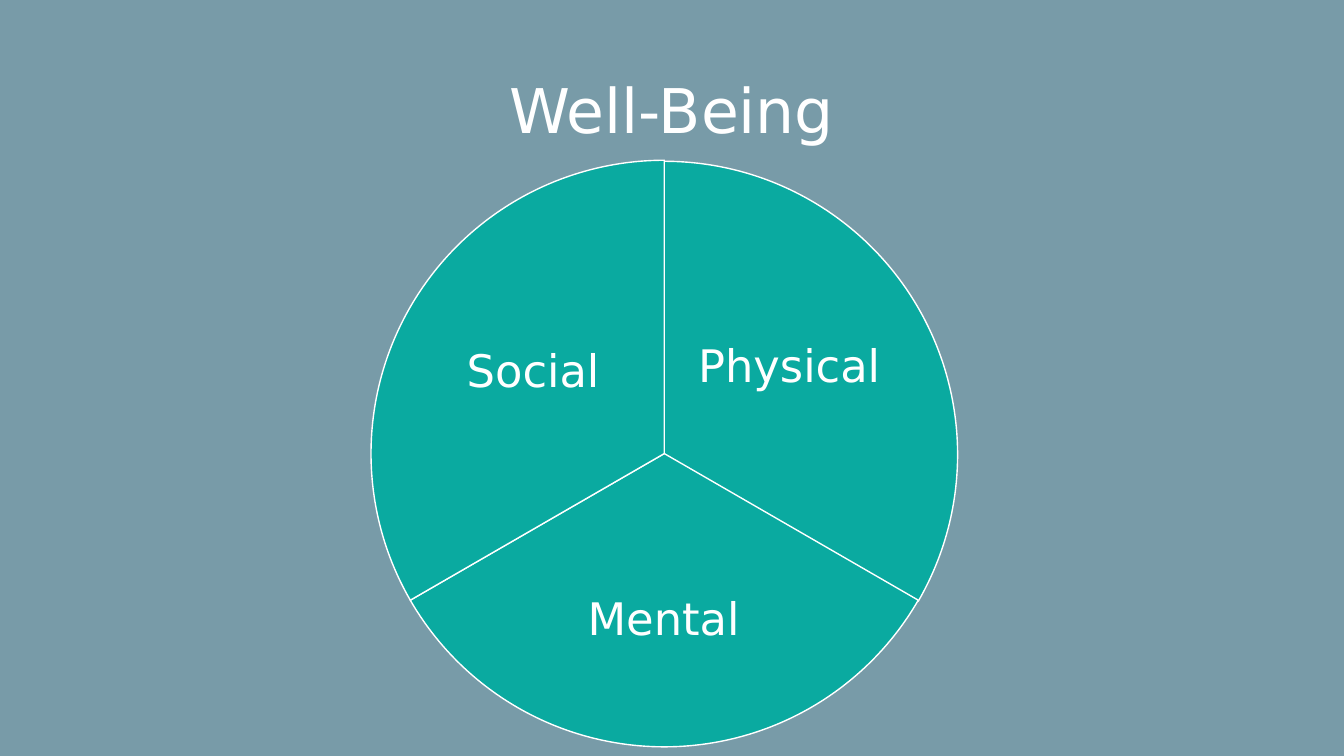
from pptx import Presentation
from pptx.dml.color import RGBColor
from pptx.enum.shapes import MSO_SHAPE
from pptx.enum.text import MSO_ANCHOR, PP_ALIGN
from pptx.util import Pt

BACKGROUND = RGBColor(0x78, 0x9B, 0xA8)
TEAL = RGBColor(0x0A, 0xAA, 0xA0)
WHITE = RGBColor(0xFF, 0xFF, 0xFF)
FONT = "DejaVu Sans"

PIE_LEFT, PIE_SIZE = 265, 419
# A pie angle is stored in 1/60000 degree, and an adjustment of 1 is 100000 units.
ADJUSTMENT_PER_DEGREE = 0.6
SLICE_ANGLE = 120

# label, start angle, pie top, label box (left, top, width, height)
SLICES = [
    ("Physical", 270, 115.2, (492.5, 193, 142.5, 139.7)),
    ("Mental", 30, 114.5, (379.4, 378.7, 189.4, 129.6)),
    ("Social", 150, 114.5, (309.6, 196.6, 142.5, 139.7)),
]


def write_centred(text_frame, text, size):
    text_frame.text = text
    text_frame.word_wrap = True
    text_frame.vertical_anchor = MSO_ANCHOR.MIDDLE
    paragraph = text_frame.paragraphs[0]
    paragraph.alignment = PP_ALIGN.CENTER
    paragraph.line_spacing = 0.9
    font = paragraph.runs[0].font
    font.name = FONT
    font.size = Pt(size)
    font.color.rgb = WHITE


presentation = Presentation()
presentation.slide_width = Pt(960)
presentation.slide_height = Pt(540)
slide = presentation.slides.add_slide(presentation.slide_layouts[5])
slide.background.fill.solid()
slide.background.fill.fore_color.rgb = BACKGROUND

title = slide.shapes.title
title.left, title.top = Pt(66), Pt(28.8)
title.width, title.height = Pt(828), Pt(104.4)
write_centred(title.text_frame, "Well-Being", 44)

wheel = slide.shapes.add_group_shape()
for label, start_angle, pie_top, label_box in SLICES:
    pie = wheel.shapes.add_shape(
        MSO_SHAPE.PIE, Pt(PIE_LEFT), Pt(pie_top), Pt(PIE_SIZE), Pt(PIE_SIZE)
    )
    end_angle = (start_angle + SLICE_ANGLE) % 360
    pie.adjustments[0] = start_angle * ADJUSTMENT_PER_DEGREE
    pie.adjustments[1] = end_angle * ADJUSTMENT_PER_DEGREE
    pie.shadow.inherit = False
    pie.fill.solid()
    pie.fill.fore_color.rgb = TEAL
    pie.line.color.rgb = WHITE
    pie.line.width = Pt(1)

    text_box = wheel.shapes.add_textbox(*(Pt(length) for length in label_box))
    text_frame = text_box.text_frame
    text_frame.margin_left = text_frame.margin_right = Pt(3)
    text_frame.margin_top = text_frame.margin_bottom = Pt(3)
    write_centred(text_frame, label, 32)

presentation.save("out.pptx")
